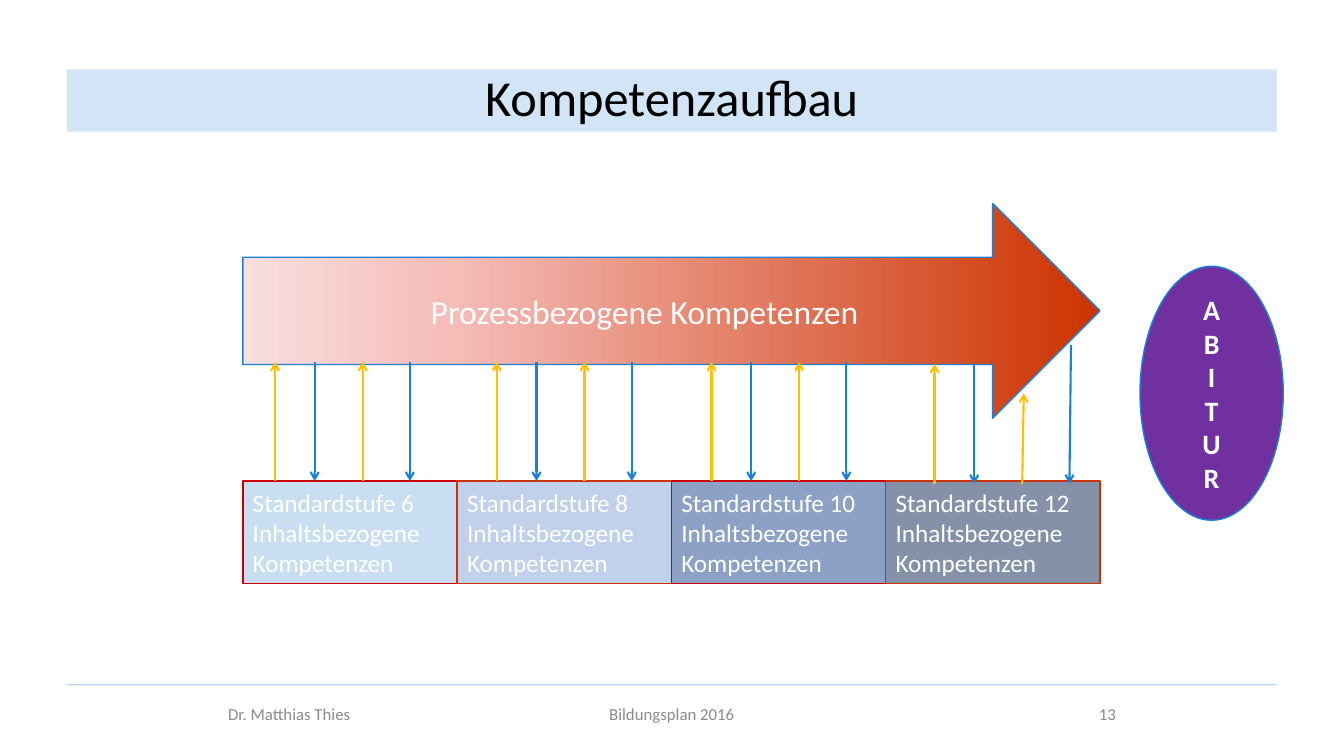
from lxml.etree import SubElement
from copy import deepcopy
from pptx import Presentation
from pptx.dml.color import RGBColor
from pptx.enum.shapes import MSO_CONNECTOR as CONN, MSO_SHAPE as SHAPE
from pptx.enum.text import MSO_ANCHOR as ANCHOR, MSO_AUTO_SIZE as AUTO, PP_ALIGN as ALIGN
from pptx.oxml.ns import qn
from pptx.util import Cm, Pt

BLUE, YELLOW, WHITE, GREY = "1C81D4", "FFC000", "FFFFFF", "8C8C8C"
TITLE = "Kompetenzaufbau"
PROCESS = "Prozessbezogene Kompetenzen"
GRADIENT = [(0, "F9DFDE"), (0.24, "F5BDBA"), (1, "CC3300")]
GOAL = "ABITUR"
STAGES = [
    ("6", "9DC3E6", "CC0000"),
    ("8", "8FAADC", "CC3300"),
    ("10", "2F5597", "CC0000"),
    ("12", "203864", "CC3300"),
]
FOOTERS = [
    ("Dr. Matthias Thies", 5.5, 5.93, ALIGN.LEFT),
    ("Bildungsplan 2016", 12.91, 8.04, ALIGN.CENTER),
    ("13", 22.44, 5.93, ALIGN.RIGHT),
]
LEFT, STAGE_W, STAGE_TOP, STAGE_H = 6.12, 5.4, 12.12, 2.59
UP_OFFSETS, DOWN_OFFSETS = (0, 2.21), (1, 3.4)
LINK_GROUPS = [
    (6.93, STAGE_TOP, (9.12, 9.12), (9.12, 9.12), 0),
    (12.52, STAGE_TOP, (9.12, 9.12), (9.12, 9.12), 0),
    (17.93, STAGE_TOP, (9.12, 9.12), (9.12, 9.12), 0),
    (23.55, 12.19, (9.17, 9.91), (9.17, 8.69), 0.04),
]


def rgb(value):
    return RGBColor.from_string(value)


def set_alpha(fill_parent, percent):
    color = next(fill_parent.iter(qn("a:srgbClr")))
    SubElement(color, qn("a:alpha")).set("val", str(percent * 1000))


def write(shape, text, size, color, align=ALIGN.LEFT, bold=False):
    tf = shape.text_frame
    tf.word_wrap = True
    tf.auto_size = AUTO.NONE
    tf.vertical_anchor = ANCHOR.MIDDLE
    tf.text = text
    for p in tf.paragraphs:
        p.alignment = align
        for r in p.runs:
            r.font.name = "Calibri"
            r.font.size = Pt(size)
            r.font.bold = bold
            r.font.color.rgb = rgb(color)


def add_box(s, kind, box, line, fill=None, alpha=None):
    sp = s.shapes.add_shape(kind, *map(Cm, box))
    sp.shadow.inherit = False
    sp.line.color.rgb = rgb(line)
    sp.line.width = Pt(1)
    if fill:
        sp.fill.solid()
        sp.fill.fore_color.rgb = rgb(fill)
    if alpha:
        set_alpha(sp.fill._xPr.find(qn("a:solidFill")), alpha)
    return sp


def add_line(s, start, end, color, width, arrow=False):
    c = s.shapes.add_connector(CONN.STRAIGHT, *map(Cm, start + end))
    c.line.color.rgb = rgb(color)
    c.line.width = Pt(width)
    if arrow:
        SubElement(c.line._get_or_add_ln(), qn("a:tailEnd")).set("type", "arrow")
    SubElement(c._element.spPr, qn("a:effectLst"))
    return c


def add_title(s):
    title = s.shapes.title
    title.left, title.top, title.width, title.height = map(Cm, (1.69, 1.75, 30.48, 1.57))
    title.fill.solid()
    title.fill.fore_color.rgb = rgb(BLUE)
    set_alpha(title._element.spPr, 20)
    write(title, TITLE, 36, "000000", ALIGN.CENTER)
    title.text_frame.paragraphs[0].line_spacing = 0.9


def add_footer(s):
    rule = add_line(s, (1.69, 17.25), (32.17, 17.25), BLUE, 1)
    set_alpha(rule._element.spPr, 30)
    for text, left, width, align in FOOTERS:
        box = s.shapes.add_textbox(Cm(left), Cm(17.35), Cm(width), Cm(1.27))
        write(box, text, 12, GREY, align)


def add_process(s):
    arrow = add_box(s, SHAPE.RIGHT_ARROW, (LEFT, 5.13, len(STAGES) * STAGE_W, 5.41), BLUE)
    arrow.fill.gradient()
    arrow.fill.gradient_angle = 0
    stops = next(arrow._element.spPr.iter(qn("a:gsLst")))
    stops.append(deepcopy(stops[0]))
    for stop, (position, color) in zip(arrow.fill.gradient_stops, GRADIENT):
        stop.position = position
        stop.color.rgb = rgb(color)
    write(arrow, PROCESS, 24, WHITE, ALIGN.CENTER)


def add_stages(s):
    for i, (level, fill, line) in enumerate(STAGES):
        box = (LEFT + i * STAGE_W, STAGE_TOP, STAGE_W, STAGE_H)
        stage = add_box(s, SHAPE.RECTANGLE, box, line, fill, 55)
        write(stage, f"Standardstufe {level} Inhaltsbezogene Kompetenzen", 18, WHITE)


def add_links(s):
    for left, bottom, up_tops, down_tops, lean in LINK_GROUPS:
        for i, (offset, top) in enumerate(zip(UP_OFFSETS, up_tops)):
            x = left + offset
            add_line(s, (x, bottom), (x + i * lean, top), YELLOW, 1.5, True)
        for i, (offset, top) in enumerate(zip(DOWN_OFFSETS, down_tops)):
            x = left + offset
            add_line(s, (x + i * lean, top), (x, bottom), BLUE, 1.5, True)


def main():
    prs = Presentation()
    prs.slide_width, prs.slide_height = Cm(33.87), Cm(19.05)
    s = prs.slides.add_slide(prs.slide_layouts[5])
    add_footer(s)
    add_title(s)
    add_process(s)
    add_stages(s)
    goal = add_box(s, SHAPE.OVAL, (28.73, 6.71, 3.61, 6.4), BLUE, "7030A0")
    write(goal, "\n".join(GOAL), 20, WHITE, ALIGN.CENTER, True)
    add_links(s)
    prs.save("out.pptx")


if __name__ == "__main__":
    main()
